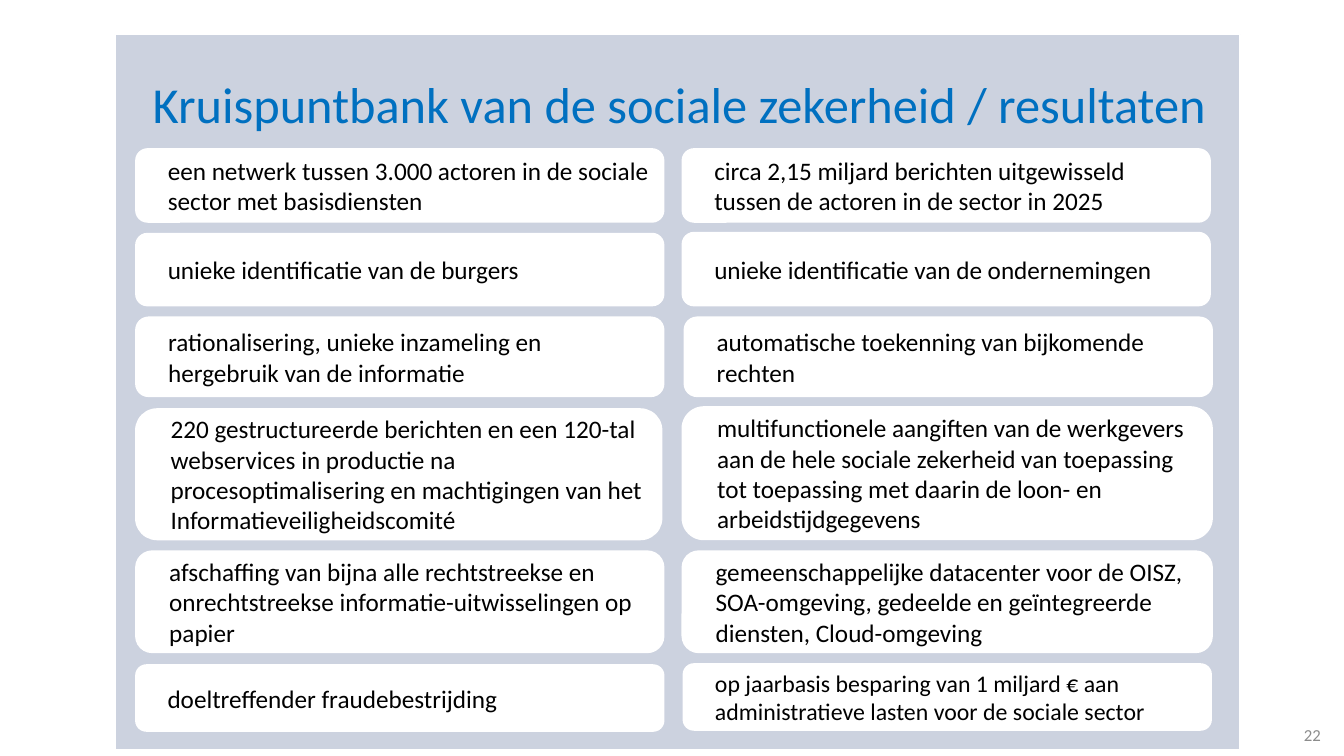
"""Build the slide on the results of the Kruispuntbank van de sociale zekerheid."""
from dataclasses import dataclass

from lxml import etree
from pptx import Presentation
from pptx.dml.color import RGBColor
from pptx.enum.shapes import MSO_SHAPE
from pptx.enum.text import MSO_ANCHOR, MSO_AUTO_SIZE, PP_ALIGN
from pptx.oxml.ns import qn
from pptx.slide import Slide
from pptx.text.text import TextFrame
from pptx.util import Emu, Pt

RECTANGLE = MSO_SHAPE.RECTANGLE
ROUNDED = MSO_SHAPE.ROUNDED_RECTANGLE
MIDDLE = MSO_ANCHOR.MIDDLE
NO_AUTOFIT = MSO_AUTO_SIZE.NONE
LEFT, CENTER, RIGHT = PP_ALIGN.LEFT, PP_ALIGN.CENTER, PP_ALIGN.RIGHT

EMU_PER_PX = 9144
TITLE_ONLY = 5
FONT = "Calibri"
COLORS = {
    "panel": "002060",
    "title": "0070C0",
    "card": "FFFFFF",
    "text": "000000",
    "number": "8C8C8C",
}
PANEL_OPACITY = 20
CARD_INDENT = 19


@dataclass(frozen=True)
class Box:
    """Place and size in px."""

    left: int
    top: int
    width: int
    height: int

    def emu(self) -> tuple[Emu, Emu, Emu, Emu]:
        """Return left, top, width and height in EMU."""
        return px(self.left), px(self.top), px(self.width), px(self.height)


@dataclass(frozen=True)
class Result:
    """One result card."""

    box: Box
    text: str
    size: int = 18


PANEL = Box(114, 34, 1116, 710)
TITLE = Box(99, 34, 1150, 145)
PAGE_NUMBER = Box(1020, 709, 300, 40)

RESULTS = [
    Result(Box(134, 147, 525, 74),
           "een netwerk tussen 3.000 actoren in de sociale sector met basisdiensten"),
    Result(Box(676, 147, 525, 74),
           "circa 2,15 miljard berichten uitgewisseld tussen de actoren in de sector in 2025"),
    Result(Box(134, 231, 525, 73), "unieke identificatie van de burgers"),
    Result(Box(676, 230, 525, 74), "unieke identificatie van de ondernemingen"),
    Result(Box(134, 314, 525, 80),
           "rationalisering, unieke inzameling en hergebruik van de informatie"),
    Result(Box(678, 314, 525, 80), "automatische toekenning van bijkomende rechten"),
    Result(Box(134, 405, 523, 131),
           "220 gestructureerde berichten en een 120-tal webservices in productie na "
           "procesoptimalisering en machtigingen van het Informatieveiligheidscomité"),
    Result(Box(676, 403, 527, 133),
           "multifunctionele aangiften van de werkgevers aan de hele sociale zekerheid "
           "van toepassing tot toepassing met daarin de loon- en arbeidstijdgegevens"),
    Result(Box(134, 546, 525, 102),
           "afschaffing van bijna alle rechtstreekse en onrechtstreekse "
           "informatie-uitwisselingen op papier"),
    Result(Box(676, 546, 527, 102),
           "gemeenschappelijke datacenter voor de OISZ, SOA-omgeving, gedeelde en "
           "geïntegreerde diensten, Cloud-omgeving"),
    Result(Box(134, 659, 525, 67), "doeltreffender fraudebestrijding"),
    Result(Box(677, 658, 525, 67),
           "op jaarbasis besparing van 1 miljard € aan administratieve lasten "
           "voor de sociale sector", 17),
]


def px(length: int) -> Emu:
    """Turn px into EMU."""
    return Emu(length * EMU_PER_PX)


def rgb(name: str) -> RGBColor:
    """Look up a named colour."""
    return RGBColor.from_string(COLORS[name])


def write(frame: TextFrame, text: str, size: int, color: str, align: PP_ALIGN) -> None:
    """Fill a frame with one formatted, vertically centred paragraph."""
    frame.text = text
    frame.word_wrap = True
    frame.auto_size = NO_AUTOFIT
    frame.vertical_anchor = MIDDLE
    paragraph = frame.paragraphs[0]
    paragraph.alignment = align
    font = paragraph.runs[0].font
    font.name = FONT
    font.size = Pt(size)
    font.color.rgb = rgb(color)


def add_panel(slide: Slide) -> None:
    """Add the translucent panel behind everything else."""
    panel = slide.shapes.add_shape(RECTANGLE, *PANEL.emu())
    panel.shadow.inherit = False
    panel.fill.solid()
    panel.fill.fore_color.rgb = rgb("panel")
    fill_color = panel._element.spPr.find(qn("a:solidFill"))[0]
    etree.SubElement(fill_color, qn("a:alpha"), val=str(PANEL_OPACITY * 1000))
    panel.line.color.rgb = rgb("card")
    panel.line.width = Pt(1)
    slide.shapes._spTree.insert(2, panel._element)


def add_title(slide: Slide) -> None:
    """Place and format the slide title."""
    title = slide.shapes.title
    title.left, title.top, title.width, title.height = TITLE.emu()
    write(title.text_frame, "Kruispuntbank van de sociale zekerheid / resultaten",
          36, "title", CENTER)
    title.text_frame.paragraphs[0].line_spacing = 0.9


def add_result(slide: Slide, result: Result) -> None:
    """Add one white result card."""
    card = slide.shapes.add_shape(ROUNDED, *result.box.emu())
    card.shadow.inherit = False
    card.fill.solid()
    card.fill.fore_color.rgb = rgb("card")
    card.line.fill.background()
    write(card.text_frame, result.text, result.size, "text", LEFT)
    paragraph = card.text_frame.paragraphs[0]
    paragraph.level = 1
    properties = paragraph._p.get_or_add_pPr()
    properties.set("marL", str(px(CARD_INDENT)))
    properties.set("indent", "0")


def add_page_number(slide: Slide) -> None:
    """Add the page number at the bottom right."""
    number = slide.shapes.add_textbox(*PAGE_NUMBER.emu())
    write(number.text_frame, "22", 12, "number", RIGHT)


def main() -> None:
    """Build and save the presentation."""
    presentation = Presentation()
    presentation.slide_width, presentation.slide_height = px(1333), px(750)
    slide = presentation.slides.add_slide(presentation.slide_layouts[TITLE_ONLY])
    add_panel(slide)
    add_title(slide)
    for result in RESULTS:
        add_result(slide, result)
    add_page_number(slide)
    presentation.save("out.pptx")


if __name__ == "__main__":
    main()
